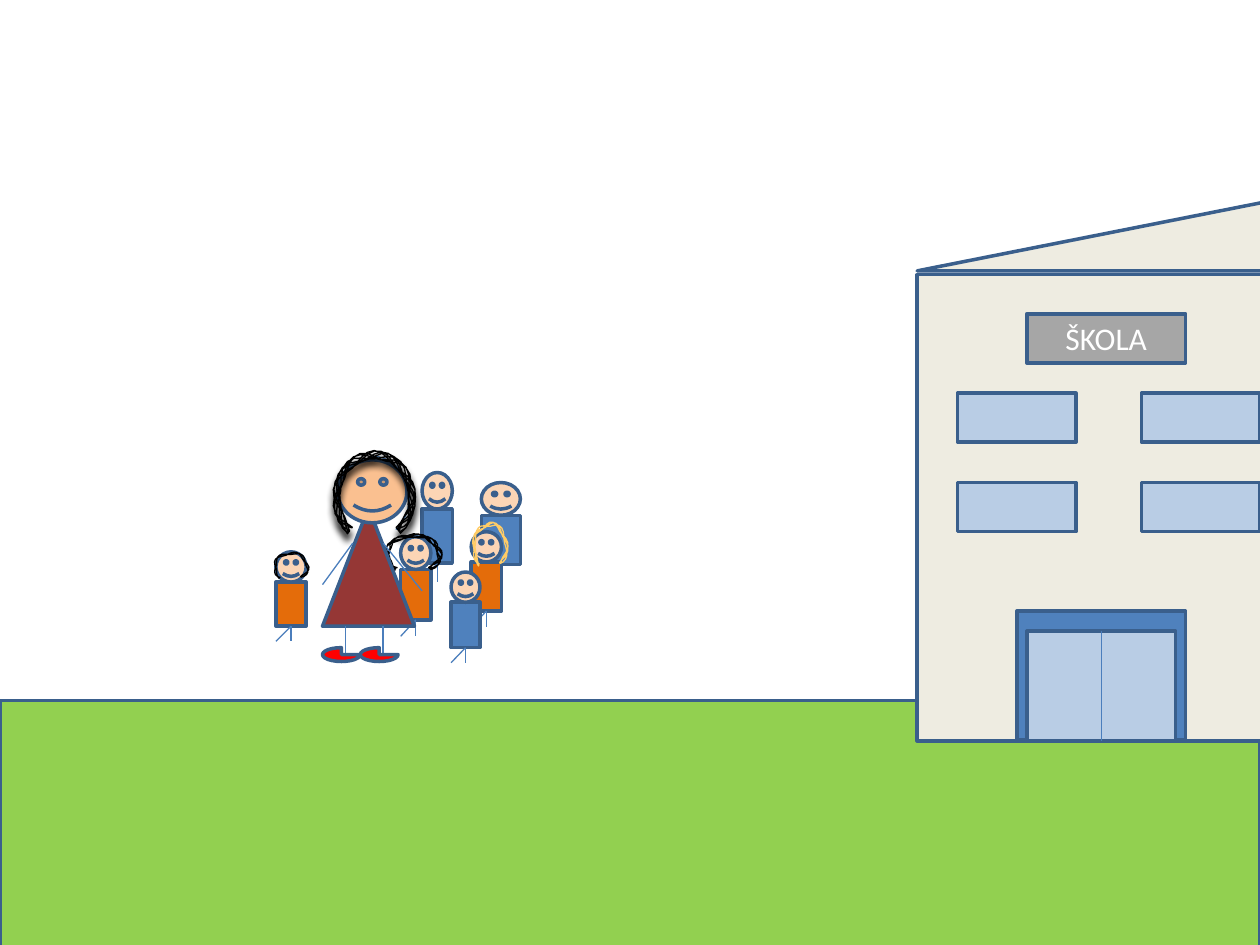
"""Draw a teacher and six children in front of a school."""
from math import cos, radians, sin

from lxml import etree
from pptx import Presentation
from pptx.dml.color import RGBColor
from pptx.enum.shapes import MSO_CONNECTOR as Link, MSO_SHAPE as Kind
from pptx.enum.text import MSO_ANCHOR as Anchor, PP_ALIGN as Align
from pptx.oxml.ns import qn
from pptx.util import Inches, Pt

EDGE = RGBColor(0x3A, 0x5F, 0x8C)
LIMB = RGBColor(0x4B, 0x7E, 0xBC)
GRASS = RGBColor(0x92, 0xD0, 0x50)
WALL = RGBColor(0xEE, 0xEC, 0xE1)
GLASS = RGBColor(0xB9, 0xCD, 0xE5)
GREY = RGBColor(0xA6, 0xA6, 0xA6)
BLUE = RGBColor(0x4F, 0x81, 0xBD)
ORANGE = RGBColor(0xE4, 0x6C, 0x0A)
SKIN = RGBColor(0xFC, 0xD5, 0xB5)
TAN = RGBColor(0xFA, 0xC0, 0x90)
DRESS = RGBColor(0x95, 0x37, 0x35)
RED = RGBColor(0xFF, 0x00, 0x00)
BLOND = RGBColor(0xFF, 0xCC, 0x66)
BLACK = RGBColor(0x00, 0x00, 0x00)
WHITE = RGBColor(0xFF, 0xFF, 0xFF)

CURLS = dict(x=3.89, y=4.34, wide=0.13, high=0.18, turns=3, color=BLOND)
BOB = dict(x=2.31, y=4.5, wide=0.13, high=0.11, turns=2, color=BLACK)
TAILS = dict(x=3.28, y=4.4, wide=0.21, high=0.15, turns=4, color=BLACK)
MANE = dict(x=2.97, y=3.95, wide=0.3, high=0.34, turns=7, color=BLACK)
STRAND = dict(x=2.95, y=3.95, wide=0.3, high=0.33, start=270, color=LIMB)

KIDS = [
    (3.82, 0.31, 3.83, 4.09, 4.48, 4.62, BLUE, None),
    (3.74, 0.24, 4.22, 4.46, 4.85, 4.98, ORANGE, CURLS),
    (3.58, 0.23, 4.54, 4.78, 5.14, 5.26, BLUE, None),
    (3.35, 0.24, 3.75, 4.04, 4.47, 4.62, BLUE, None),
    (2.19, 0.24, 4.38, 4.62, 4.97, 5.09, ORANGE, BOB),
    (3.18, 0.24, 4.26, 4.52, 4.92, 5.05, ORANGE, TAILS)]


def shape(pool, kind, x, y, w, h, fill):
    """Add a filled, outlined preset shape."""
    item = pool.add_shape(kind, Inches(x), Inches(y), Inches(w), Inches(h))
    item.shadow.inherit = False
    item.fill.solid()
    item.fill.fore_color.rgb = fill
    item.line.color.rgb = EDGE
    item.line.width = Pt(2)
    return item


def write(item, text, size=18, font="Calibri", color=WHITE, align=Align.CENTER):
    """Put one formatted line of text in a shape."""
    frame = item.text_frame
    frame.vertical_anchor = Anchor.MIDDLE
    para = frame.paragraphs[0]
    para.alignment = align
    run = para.add_run()
    run.text = text
    run.font.size = Pt(size)
    run.font.name = font
    run.font.color.rgb = color


def line(pool, x, y, end_x, end_y):
    """Add a thin straight line."""
    item = pool.add_connector(
        Link.STRAIGHT, Inches(x), Inches(y), Inches(end_x), Inches(end_y))
    item.line.color.rgb = LIMB
    item.line.width = Pt(0.75)
    etree.SubElement(item.element.spPr, qn("a:effectLst"))
    return item


def hair(pool, x, y, wide, high, color, turns=1, start=130, end=410):
    """Scribble hair to and fro over the top of a head."""
    sweep = list(range(start, end + 1, 10))
    points = []
    for turn in range(turns):
        for deg in sweep if turn % 2 == 0 else reversed(sweep):
            wave = 1 + 0.1 * sin(len(points) * 0.8) if turns > 1 else 1
            points.append((Inches(x + wide * wave * cos(radians(deg))),
                           Inches(y + high * wave * sin(radians(deg)))))
    pen = pool.build_freeform(*points[0])
    pen.add_line_segments(points[1:], close=False)
    item = pen.convert_to_shape()
    item.shadow.inherit = False
    item.fill.background()
    item.line.color.rgb = color
    item.line.width = Pt(0.75)
    return item


def shade(item):
    """Give a shape a soft black shadow below it."""
    effects = item.element.spPr.find(qn("a:effectLst"))
    glow = etree.SubElement(effects, qn("a:outerShdw"), blurRad=str(Pt(4)),
                            dist=str(Pt(4)), dir="5400000", rotWithShape="0")
    etree.SubElement(glow, qn("a:srgbClr"), val=str(BLACK))


def school(pool):
    """Draw the school with its roof, windows, sign and door."""
    shape(pool, Kind.RECTANGLE, 7.28, 2.18, 3.03, 3.7, WALL)
    roof = shape(pool, Kind.ISOSCELES_TRIANGLE, 7.28, 1.55, 3.03, 0.6, WALL)
    roof.adjustments[0] = 1
    for y in (3.12, 3.83):
        for x in (7.6, 9.06):
            shape(pool, Kind.RECTANGLE, x, y, 0.94, 0.39, GLASS)
    write(shape(pool, Kind.RECTANGLE, 8.15, 2.49, 1.26, 0.39, GREY), "ŠKOLA")
    shape(pool, Kind.RECTANGLE, 8.07, 4.85, 1.34, 1.02, BLUE)
    door = shape(pool, Kind.RECTANGLE, 8.15, 5.01, 1.18, 0.87, GLASS)
    gap = line(pool, 8.74, 5.01, 8.74, 5.88)
    gap.begin_connect(door, 0)
    gap.end_connect(door, 2)


def child(pool, x, w, top, neck, hem, foot, color, wig):
    """Draw one child, with hair if a wig is given."""
    body = shape(pool, Kind.RECTANGLE, x, neck, w, hem - neck, color)
    mid = x + w / 2
    for toe in (x, mid):
        line(pool, mid, hem, toe, foot).begin_connect(body, 2)
    shape(pool, Kind.SMILEY_FACE, x, top, w, neck - top, SKIN)
    if wig:
        hair(pool, **wig)


def teacher(pool):
    """Draw the teacher."""
    shape(pool, Kind.ISOSCELES_TRIANGLE, 2.56, 4.03, 0.73, 0.94, DRESS)
    for x in (2.74, 3.04):
        line(pool, x, 4.97, x, 5.19)
    for x in (2.56, 2.86):
        shape(pool, Kind.PIE, x, 5.14, 0.3, 0.11, RED)
    shape(pool, Kind.SMILEY_FACE, 2.68, 3.65, 0.55, 0.5, TAN)
    hair(pool, **STRAND)
    shade(hair(pool, **MANE))
    line(pool, 2.8, 4.31, 2.56, 4.64)
    line(pool, 3.04, 4.31, 3.35, 4.69)


def main():
    """Build and save the slide."""
    deck = Presentation()
    deck.slide_width, deck.slide_height = Inches(10), Inches(7.5)
    pool = deck.slides.add_slide(deck.slide_layouts[6]).shapes
    shape(pool, Kind.RECTANGLE, 0, 5.56, 10, 2.1, GRASS)
    school(pool)
    crowd = pool.add_group_shape().shapes
    for kid in KIDS:
        child(crowd.add_group_shape().shapes, *kid)
    teacher(crowd.add_group_shape().shapes)
    deck.save("out.pptx")


if __name__ == "__main__":
    main()
